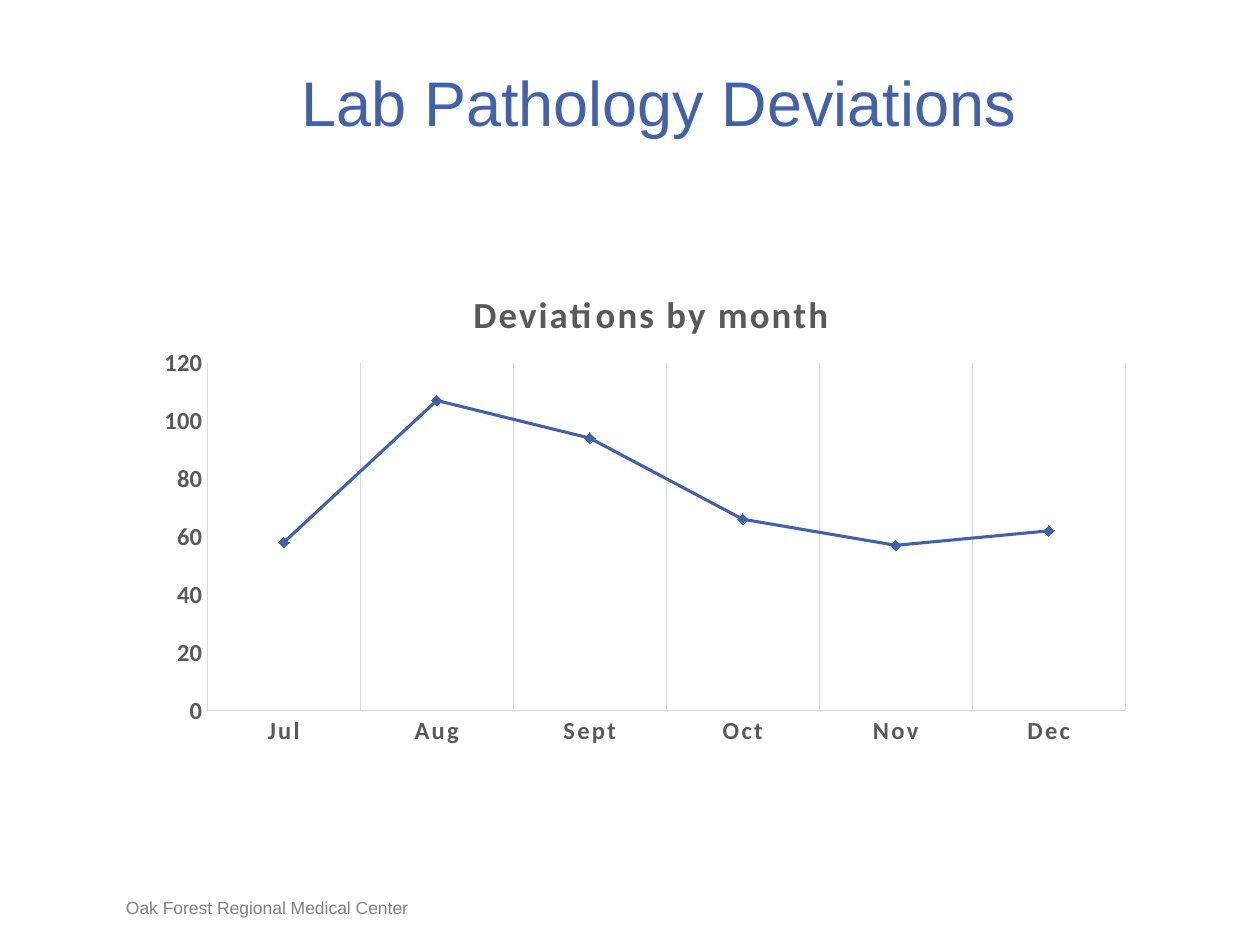
from dataclasses import dataclass

from lxml import etree
from pptx import Presentation
from pptx import util as u
from pptx.chart.data import CategoryChartData
from pptx.dml.color import RGBColor
from pptx.enum import chart as ch, text
from pptx.oxml import parse_xml
from pptx.oxml.ns import nsdecls, qn


@dataclass(frozen=True)
class Theme:
    """Colours, fonts and type sizes of the slide."""
    blue: RGBColor = RGBColor.from_string("4261AD")
    dark: RGBColor = RGBColor.from_string("595959")
    grey: RGBColor = RGBColor.from_string("808080")
    rule: RGBColor = RGBColor.from_string("D9D9D9")
    text_font: str = "Arial"
    chart_font: str = "Calibri"
    title: int = 36
    chart_title: int = 21
    axis: int = 14
    footer: int = 10
    spacing: int = 120


THEME = Theme()
MONTHS = ("Jul", "Aug", "Sept", "Oct", "Nov", "Dec")
DEVIATIONS = (58, 107, 94, 66, 57, 62)


def box(left, top, width, height):
    """Return a box in inches as lengths."""
    return tuple(u.Inches(v) for v in (left, top, width, height))


def style_font(font, name, size, color, bold=False):
    """Set the look of a font."""
    font.name, font.size, font.bold = name, u.Pt(size), bold
    font.color.rgb = color


def style_line(line, color, width):
    """Set the colour and width of a line."""
    line.color.rgb = color
    line.width = u.Pt(width)


def fill_text(sp, words, size, color, anchor, align):
    """Write one styled paragraph in a shape without insets."""
    tf = sp.text_frame
    tf.text = words
    tf.word_wrap = True
    tf.vertical_anchor = anchor
    tf.margin_left = tf.margin_right = tf.margin_top = tf.margin_bottom = 0
    p = tf.paragraphs[0]
    p.alignment = align
    style_font(p.runs[0].font, THEME.text_font, size, color)


def add_title(s, area):
    """Place the slide title."""
    sp = s.shapes.title
    sp.left, sp.top, sp.width, sp.height = area
    fill_text(sp, "Lab Pathology Deviations", THEME.title, THEME.blue,
              text.MSO_ANCHOR.MIDDLE, text.PP_ALIGN.CENTER)


def add_footer(s, area):
    """Place the name of the organisation."""
    fill_text(s.shapes.add_textbox(*area), "Oak Forest Regional Medical Center",
              THEME.footer, THEME.grey, text.MSO_ANCHOR.BOTTOM, text.PP_ALIGN.LEFT)


def set_layout(parent, before, **values):
    """Give a chart part a manual layout ahead of the named child."""
    for old in parent.findall(qn("c:layout")):
        parent.remove(old)
    layout = parse_xml(f"<c:layout {nsdecls('c')}><c:manualLayout/></c:layout>")
    for tag, value in values.items():
        etree.SubElement(layout[0], qn(f"c:{tag}")).set("val", str(value))
    parent.find(qn(before)).addprevious(layout)


def style_axis(axis):
    """Format the labels and line of an axis."""
    axis.major_tick_mark = axis.minor_tick_mark = ch.XL_TICK_MARK.NONE
    style_font(axis.tick_labels.font, THEME.chart_font, THEME.axis, THEME.dark, True)
    style_line(axis.format.line, THEME.rule, 0.75)


def style_series(series):
    """Format the line and its diamond markers."""
    series.smooth = False
    style_line(series.format.line, THEME.blue, 1.75)
    marker = series.marker
    marker.style, marker.size = ch.XL_MARKER_STYLE.DIAMOND, 6
    marker.format.fill.solid()
    marker.format.fill.fore_color.rgb = THEME.blue
    style_line(marker.format.line, THEME.blue, 0.75)


def add_chart_title(chart):
    """Write and place the letter-spaced chart title."""
    tf = chart.chart_title.text_frame
    tf.text = "Deviations by month"
    r = tf.paragraphs[0].runs[0]
    style_font(r.font, THEME.chart_font, THEME.chart_title, THEME.dark, True)
    r.font._element.set("spc", str(THEME.spacing))
    title = chart.chart_title._element
    chart.chart_title.include_in_layout = False
    set_layout(title, "c:overlay", xMode="edge", yMode="edge", x=0.32, y=0.06)


def add_deviation_chart(s, area):
    """Place the line chart of deviations by month."""
    data = CategoryChartData()
    data.categories = MONTHS
    data.add_series("Series 1", DEVIATIONS)
    chart = s.shapes.add_chart(ch.XL_CHART_TYPE.LINE_MARKERS, *area, data).chart
    chart.has_legend = False
    chart.font.name, chart.font.size = THEME.chart_font, u.Pt(10)
    chart.plots[0].vary_by_categories = False
    add_chart_title(chart)
    months, counts = chart.category_axis, chart.value_axis
    for axis in (months, counts):
        style_axis(axis)
    months.tick_labels.font._element.set("spc", str(THEME.spacing))
    months.has_major_gridlines = True
    style_line(months.major_gridlines.format.line, THEME.rule, 0.75)
    counts.has_major_gridlines = False
    counts.minimum_scale, counts.maximum_scale, counts.major_unit = 0, 120, 20
    style_series(chart.plots[0].series[0])
    plot_area = chart._chartSpace.chart.plotArea
    set_layout(plot_area, "c:lineChart", layoutTarget="inner", xMode="edge",
               yMode="edge", x=0.06, y=0.22, w=0.92, h=0.69)


def main():
    """Build the slide and save it."""
    prs = Presentation()
    prs.slide_width, prs.slide_height = u.Inches(10), u.Inches(7.5)
    s = prs.slides.add_slide(prs.slide_layouts[5])
    add_footer(s, box(1, 7.12, 3.17, 0.17))
    add_title(s, box(0.98, 0.5, 8.5, 0.61))
    add_deviation_chart(s, box(1.17, 2, 7.92, 4))
    prs.save("out.pptx")


if __name__ == "__main__":
    main()
